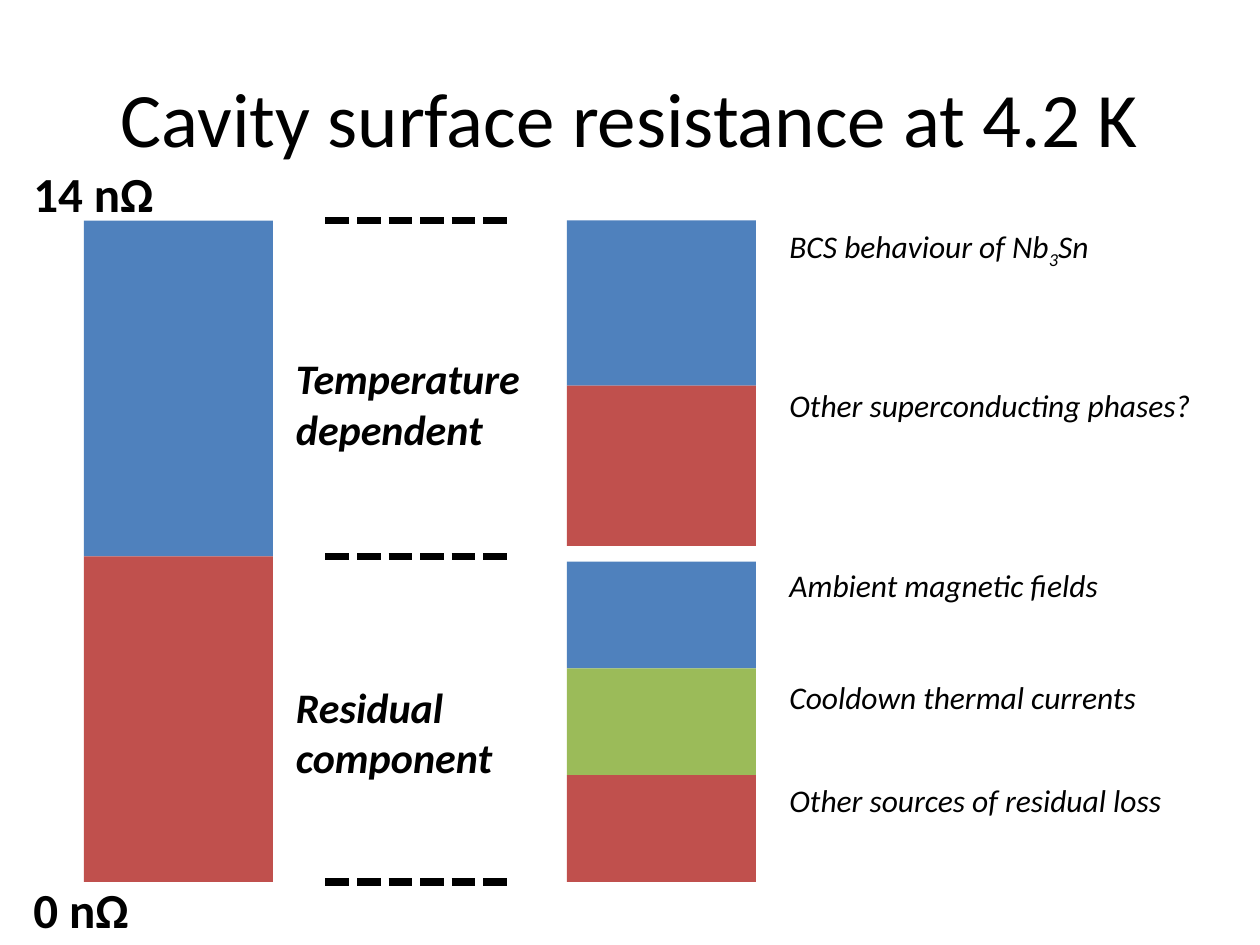
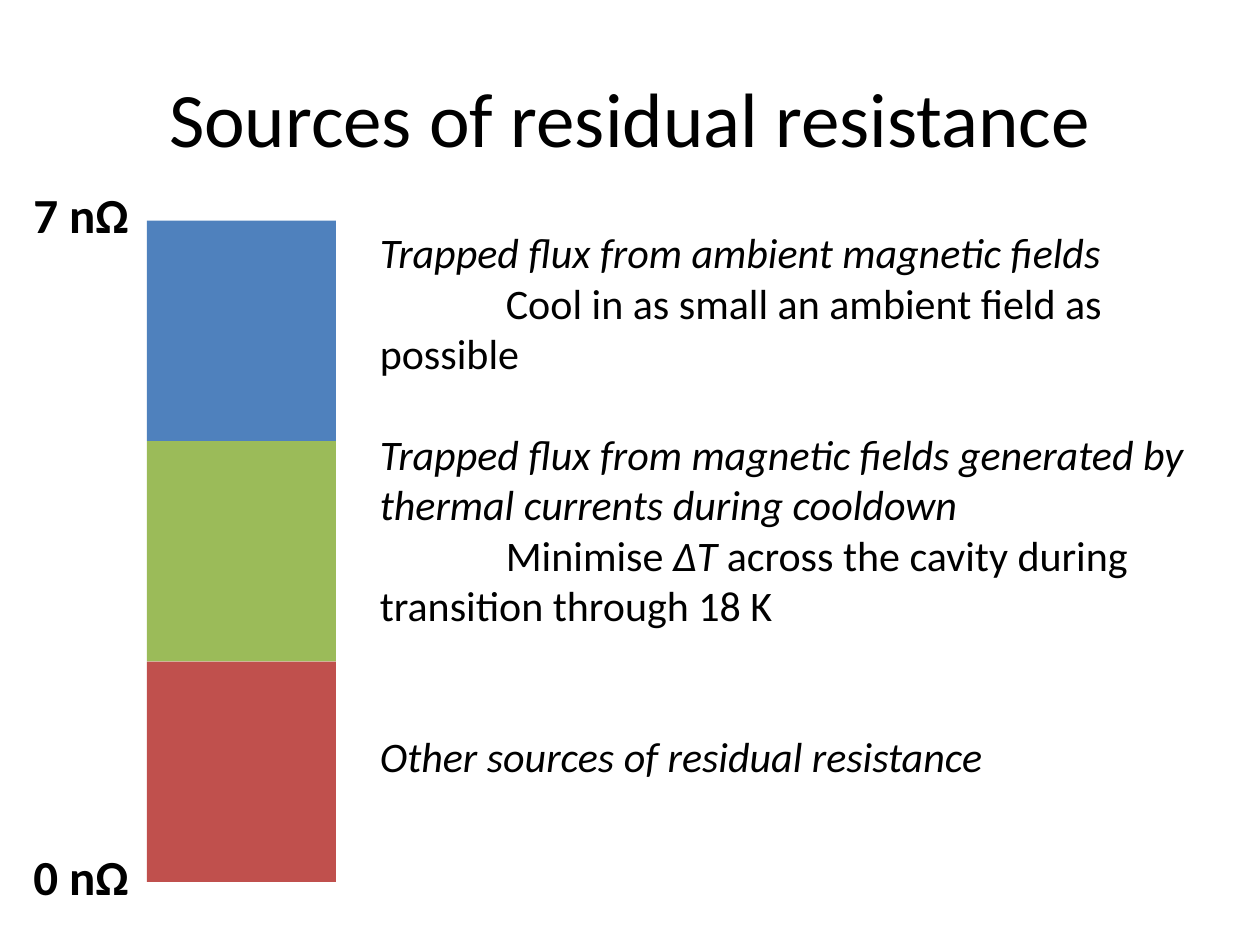
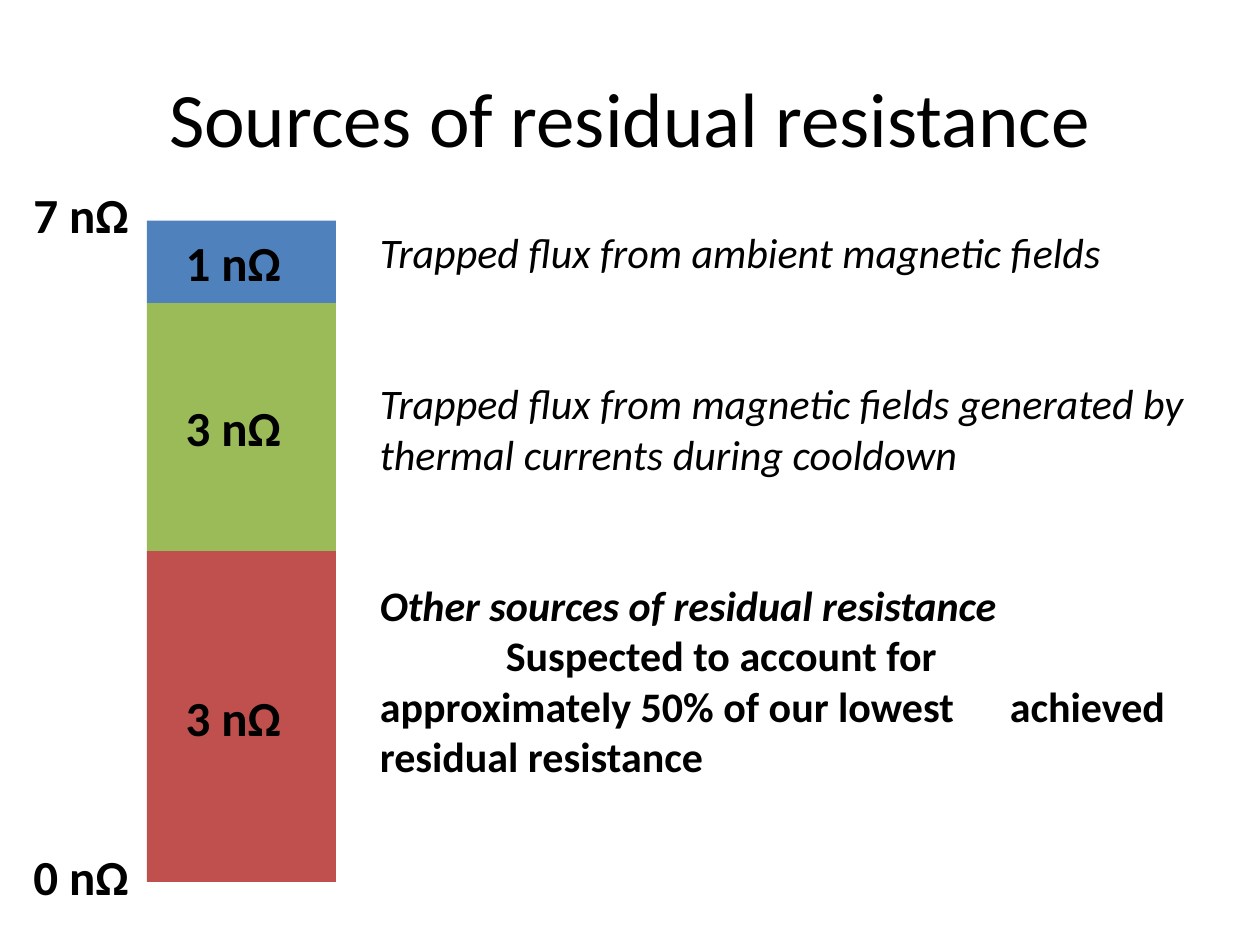
"""Build three slides on the surface resistance of a superconducting cavity."""
from dataclasses import dataclass

from pptx import Presentation
from pptx.dml.color import RGBColor
from pptx.enum.dml import MSO_LINE
from pptx.enum.shapes import MSO_CONNECTOR, MSO_SHAPE
from pptx.enum.text import MSO_ANCHOR, PP_ALIGN
from pptx.oxml.ns import qn
from pptx.util import Inches, Pt

RECTANGLE = MSO_SHAPE.RECTANGLE
STRAIGHT = MSO_CONNECTOR.STRAIGHT
SHORT_DASH = MSO_LINE.SQUARE_DOT
LEFT, CENTER = PP_ALIGN.LEFT, PP_ALIGN.CENTER
TOP, MIDDLE = MSO_ANCHOR.TOP, MSO_ANCHOR.MIDDLE


@dataclass(frozen=True)
class Theme:
    font: str = "Calibri"
    ink: RGBColor = RGBColor(0x00, 0x00, 0x00)
    blue: RGBColor = RGBColor(0x4F, 0x81, 0xBD)
    red: RGBColor = RGBColor(0xC0, 0x50, 0x4D)
    green: RGBColor = RGBColor(0x9B, 0xBB, 0x59)
    title: int = 44
    scale: int = 28
    body: int = 24
    note: int = 18
    dash: float = 4.5
    body_line: float = 28.8


theme = Theme()
presentation = Presentation()
presentation.slide_width = Inches(10)
presentation.slide_height = Inches(7.5)
blank_layout = presentation.slide_layouts[6]

CELL = presentation.slide_width // 120
BAR_TOP, BAR_BOTTOM, BAR_WIDTH = 21, 84, 18
BAR_HEIGHT = BAR_BOTTOM - BAR_TOP
SCALE_WIDTH, SCALE_HEIGHT = 13, 6.8


def add_text(slide, box, size, paragraphs, align=LEFT, anchor=TOP):
    """Add a text box; each paragraph is (runs, blank lines above, first-line indent)."""
    shape = slide.shapes.add_textbox(*(round(cells * CELL) for cells in box))
    frame = shape.text_frame
    frame.word_wrap = True
    frame.vertical_anchor = anchor
    for index, (runs, gap, indent) in enumerate(paragraphs):
        paragraph = frame.add_paragraph() if index else frame.paragraphs[0]
        paragraph.alignment = align
        if gap:
            paragraph.space_before = Pt(gap * theme.body_line)
        if indent:
            properties = paragraph._p.get_or_add_pPr()
            properties.set("marL", "0")
            properties.set("indent", str(indent * CELL))
        for text, style in runs:
            run = paragraph.add_run()
            run.text = text
            run.font.name = theme.font
            run.font.size = Pt(size)
            run.font.color.rgb = theme.ink
            run.font.bold = "b" in style
            run.font.italic = "i" in style
            if "s" in style:
                run._r.get_or_add_rPr().set("baseline", "-25000")


def add_stack(slide, left, top, height, segments):
    """Stack coloured segments by weight and return the middle row of each."""
    total = sum(weight for weight, color in segments)
    middles = []
    for weight, color in segments:
        rows = height * weight / total
        box = (left, top, BAR_WIDTH, rows)
        shape = slide.shapes.add_shape(RECTANGLE, *(round(cells * CELL) for cells in box))
        shape.shadow.inherit = False
        shape.fill.solid()
        shape.fill.fore_color.rgb = color
        shape.line.fill.background()
        middles.append(top + rows / 2)
        top += rows
    return middles


titles = ["Cavity surface resistance at 4.2 K"] + 2 * ["Sources of residual resistance"]
slides = []
for title in titles:
    slide = presentation.slides.add_slide(blank_layout)
    add_text(slide, (6, 3.6, 108, 15), theme.title, [([(title, "")], 0, 0)], CENTER, MIDDLE)
    slides.append(slide)
overview, remedies, shares = slides

add_stack(overview, 8, BAR_TOP, BAR_HEIGHT, [(32, theme.blue), (31, theme.red)])
add_stack(overview, 54, BAR_TOP, 31, [(1.31, theme.blue), (1.27, theme.red)])
add_stack(overview, 54, 53.5, 30.5, [(1, theme.blue), (1, theme.green), (1, theme.red)])

for row in (BAR_BOTTOM, 53, BAR_TOP):
    divider = overview.shapes.add_connector(STRAIGHT, 31 * CELL, row * CELL, 49 * CELL, row * CELL)
    divider.line.color.rgb = theme.ink
    divider.line.width = Pt(theme.dash)
    divider.line.dash_style = SHORT_DASH
    properties = divider._element.spPr
    properties.append(properties.makeelement(qn("a:effectLst"), {}))

for row, component in ((33, "Temperature dependent"), (64.3, "Residual component")):
    add_text(overview, (27, row, 26, 10.9), theme.body, [([(component, "bi")], 0, 0)])

contributions = [
    (21, [("BCS behaviour of Nb", "i"), ("3", "is"), ("Sn", "i")]),
    (36.2, [("Other superconducting phases?", "i")]),
    (53.3, [("Ambient magnetic fields", "i")]),
    (64, [("Cooldown thermal currents", "i")]),
    (73.8, [("Other sources of residual loss", "i")]),
]
for row, runs in contributions:
    add_text(overview, (74, row, 44, 4.8), theme.note, [(runs, 0, 0)])

scale_labels = [(overview, 83.2, 13, "0 nΩ"), (overview, 15, 17, "14 nΩ")]
for slide in (remedies, shares):
    scale_labels += [(slide, 80, SCALE_WIDTH, "0 nΩ"), (slide, 17, SCALE_WIDTH, "7 nΩ")]
for slide, row, width, label in scale_labels:
    add_text(slide, (2, row, width, SCALE_HEIGHT), theme.scale, [([(label, "b")], 0, 0)])

ambient = "Trapped flux from ambient magnetic fields"
thermal = "Trapped flux from magnetic fields generated by thermal currents during cooldown"
other = "Other sources of residual resistance"

add_stack(remedies, 14, BAR_TOP, BAR_HEIGHT, [(1, theme.blue), (1, theme.green), (1, theme.red)])
add_text(remedies, (35, BAR_TOP, 79, 59.4), theme.body, [
    ([(ambient, "i")], 0, 0),
    ([("Cool in as small an ambient field as possible", "")], 0, 12),
    ([(thermal, "i")], 1, 0),
    ([("Minimise ", ""), ("ΔT", "i"),
      (" across the cavity during transition through 18 K", "")], 0, 12),
    ([(other, "i")], 2, 0),
])

source_shares = [(1, theme.blue), (3, theme.green), (4, theme.red)]
middles = add_stack(shares, 14, BAR_TOP, BAR_HEIGHT, source_shares)
add_text(shares, (35, BAR_TOP, 79, 54.5), theme.body, [
    ([(ambient, "i")], 0, 0),
    ([(thermal, "i")], 2, 0),
    ([(other, "bi")], 2, 0),
    ([("Suspected to account for \tapproximately 50% of our lowest \tachieved "
       "residual resistance", "b")], 0, 12),
])
for middle, label in zip(middles, ("1 nΩ", "3 nΩ", "3 nΩ")):
    box = (16.5, middle - SCALE_HEIGHT / 2, SCALE_WIDTH, SCALE_HEIGHT)
    add_text(shares, box, theme.scale, [([(label, "b")], 0, 0)])

presentation.save("out.pptx")
